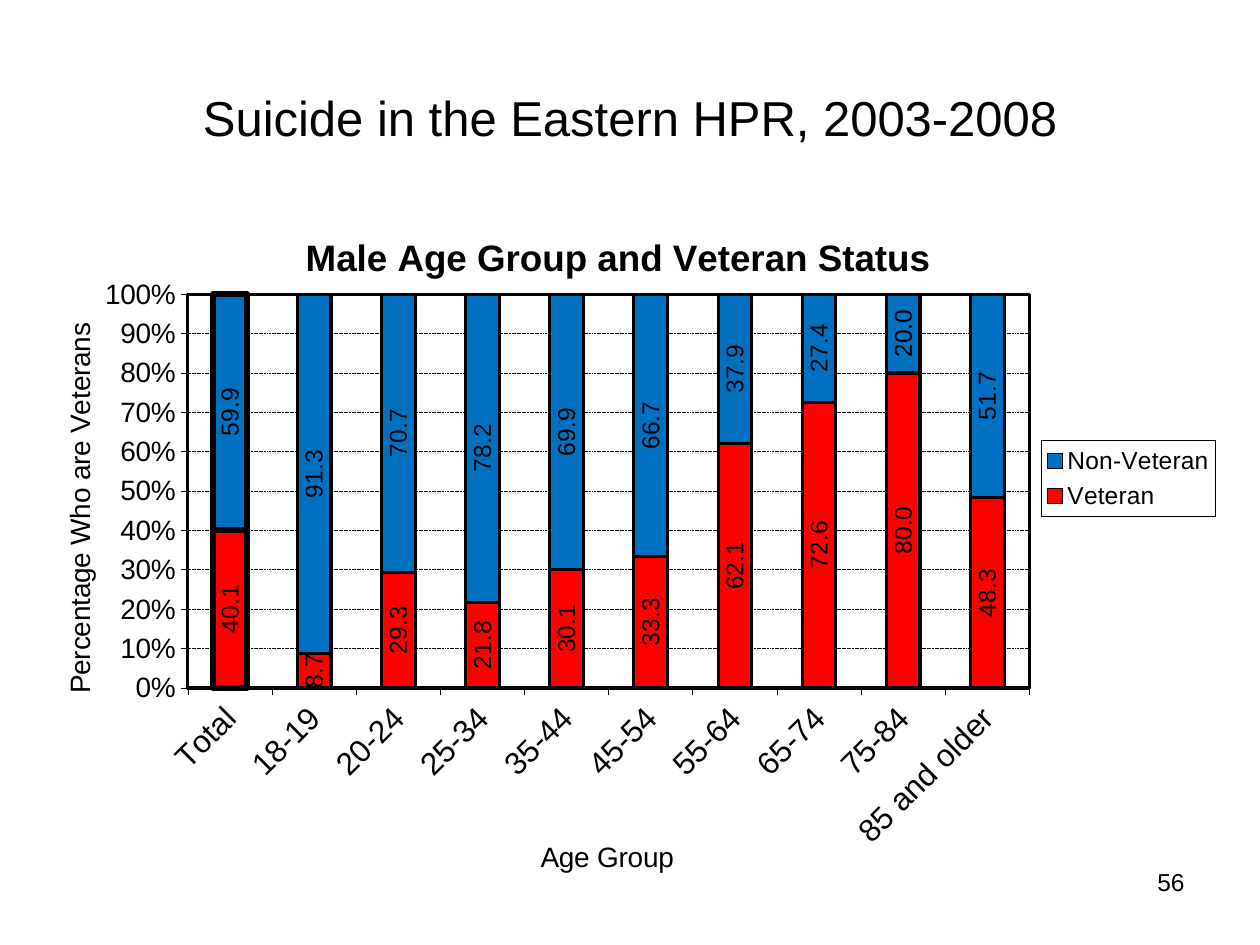
from dataclasses import dataclass

from lxml import etree
from pptx import Presentation
from pptx.chart.data import CategoryChartData
from pptx.dml.color import RGBColor
from pptx.enum import chart as ch, dml, text
from pptx.oxml import parse_xml
from pptx.oxml.ns import nsdecls, qn
from pptx.util import Pt


@dataclass(frozen=True)
class Theme:
    font: str = "Arial"
    black: str = "000000"
    red: str = "FF0000"
    blue: str = "0070C0"
    title: int = 28
    chart_title: int = 21
    category: int = 18
    axis: int = 16
    small: int = 14
    hairline: float = 0.38
    outline: float = 1.75
    emphasis: float = 3.5


@dataclass(frozen=True)
class Box:
    left: float
    top: float
    width: float
    height: float


@dataclass(frozen=True)
class Group:
    name: str
    color: str
    values: tuple[float, ...]


THEME = Theme()
AGES = ("Total", "18-19", "20-24", "25-34", "35-44", "45-54",
        "55-64", "65-74", "75-84", "85 and older")
VETERAN = (40.1, 8.7, 29.3, 21.8, 30.1, 33.3, 62.1, 72.6, 80.0, 48.3)
GROUPS = (
    Group("Veteran", THEME.red, VETERAN),
    Group("Non-Veteran", THEME.blue, tuple(round(100 - v, 1) for v in VETERAN)),
)


def style_font(font, size: float, bold: bool = False) -> None:
    font.name, font.size, font.bold = THEME.font, Pt(size), bold
    font.color.rgb = RGBColor.from_string(THEME.black)


def write(tf, words: str, *, size: float, bold: bool = False,
          align=text.PP_ALIGN.CENTER) -> None:
    p = tf.paragraphs[0]
    p.alignment = align
    r = p.add_run()
    r.text = words
    style_font(r.font, size, bold)


def add_text(s, box: Box, words: str, anchor, **fmt) -> None:
    sp = s.shapes.add_textbox(Pt(box.left), Pt(box.top), Pt(box.width), Pt(box.height))
    tf = sp.text_frame
    tf.word_wrap = True
    tf.vertical_anchor = anchor
    write(tf, words, **fmt)


def style_line(line, width: float) -> None:
    line.color.rgb = RGBColor.from_string(THEME.black)
    line.width = Pt(width)


def outline_xml(width: float) -> str:
    return (f'<c:spPr {nsdecls("c", "a")}><a:noFill/><a:ln w="{Pt(width)}"><a:solidFill>'
            f'<a:srgbClr val="{THEME.black}"/></a:solidFill></a:ln></c:spPr>')


def place(element, index: int, inner: bool = False, **fractions: float) -> None:
    """Give a chart part a manual layout in fractions of the chart area."""
    for old in element.findall(qn("c:layout")):
        element.remove(old)
    layout = parse_xml(f'<c:layout {nsdecls("c")}><c:manualLayout/></c:layout>')
    values = {"layoutTarget": "inner"} if inner else {}
    values |= {"xMode": "edge", "yMode": "edge"} | fractions
    for tag, value in values.items():
        etree.SubElement(layout[0], qn(f"c:{tag}")).set("val", str(value))
    element.insert(index, layout)


def rotate(element, degrees: int) -> None:
    body = element.find(qn("c:txPr")).find(qn("a:bodyPr"))
    body.set("rot", str(degrees * 60000))
    body.set("vert", "horz")


def style_axis(axis, title: str, size: float, x: float, y: float) -> None:
    write(axis.axis_title.text_frame, title, size=THEME.axis)
    place(axis.axis_title._element, 1, x=x, y=y)
    style_font(axis.tick_labels.font, size)
    style_line(axis.format.line, THEME.hairline)
    axis.major_tick_mark = ch.XL_TICK_MARK.OUTSIDE
    axis.minor_tick_mark = ch.XL_TICK_MARK.NONE


def style_series(series, group: Group) -> None:
    total = series.points[0]
    for part, width in ((series, THEME.outline), (total, THEME.emphasis)):
        part.format.fill.solid()
        part.format.fill.fore_color.rgb = RGBColor.from_string(group.color)
        style_line(part.format.line, width)
    labels = series.data_labels
    labels.show_value = True
    labels.number_format, labels.number_format_is_linked = "0.0", False
    labels.position = ch.XL_LABEL_POSITION.CENTER
    style_font(labels.font, THEME.small)
    rotate(labels._element, -90)


def add_age_chart(s, box: Box) -> None:
    data = CategoryChartData(number_format="0.0")
    data.categories = AGES
    for group in GROUPS:
        data.add_series(group.name, group.values)
    chart = s.shapes.add_chart(ch.XL_CHART_TYPE.COLUMN_STACKED_100, Pt(box.left), Pt(box.top),
                               Pt(box.width), Pt(box.height), data).chart
    style_font(chart.font, THEME.axis)

    # Chart title
    chart.has_title = True
    write(chart.chart_title.text_frame, "Male Age Group and Veteran Status",
          size=THEME.chart_title, bold=True)
    place(chart.chart_title._element, 1, x=0.22, y=0.03)

    # Columns and plot frame
    plot = chart.plots[0]
    plot.gap_width, plot.overlap = 150, 100
    plot.vary_by_categories = False
    for series, group in zip(plot.series, GROUPS):
        style_series(series, group)
    area = plot._element.getparent()
    place(area, 0, inner=True, x=0.126, y=0.126, w=0.712, h=0.565)
    area.append(parse_xml(outline_xml(THEME.outline)))

    # Axes
    style_axis(chart.category_axis, "Age Group", THEME.category, 0.42, 0.9)
    rotate(chart.category_axis._element, -45)
    axis = chart.value_axis
    style_axis(axis, "Percentage Who are Veterans", THEME.axis, 0.015, 0.16)
    axis.axis_title.text_frame._txBody.find(qn("a:bodyPr")).set("rot", str(-90 * 60000))
    axis.minimum_scale, axis.maximum_scale, axis.major_unit = 0, 1, 0.1
    axis.tick_labels.number_format = "0%"
    axis.tick_labels.number_format_is_linked = False
    grid = axis.major_gridlines.format.line
    style_line(grid, THEME.hairline)
    grid.dash_style = dml.MSO_LINE.SQUARE_DOT

    # Legend
    chart.has_legend = True
    legend = chart.legend
    legend.position = ch.XL_LEGEND_POSITION.RIGHT
    legend.include_in_layout = False
    style_font(legend.font, THEME.small)
    place(legend._element, 1, x=0.848, y=0.336, w=0.147, h=0.109)
    legend._element.find(qn("c:txPr")).addprevious(parse_xml(outline_xml(THEME.hairline)))


def main() -> None:
    prs = Presentation()
    prs.slide_width, prs.slide_height = Pt(720), Pt(540)
    s = prs.slides.add_slide(prs.slide_layouts[6])
    # Slide title, chart and page number
    add_text(s, Box(36, 21.6, 648, 90), "Suicide in the Eastern HPR, 2003-2008",
             text.MSO_ANCHOR.MIDDLE, size=THEME.title)
    add_age_chart(s, Box(22.3, 118, 675.4, 398.2))
    add_text(s, Box(516.2, 491.8, 167.8, 37.4), "56", text.MSO_ANCHOR.TOP,
             size=THEME.small, align=text.PP_ALIGN.RIGHT)
    prs.save("out.pptx")


if __name__ == "__main__":
    main()
